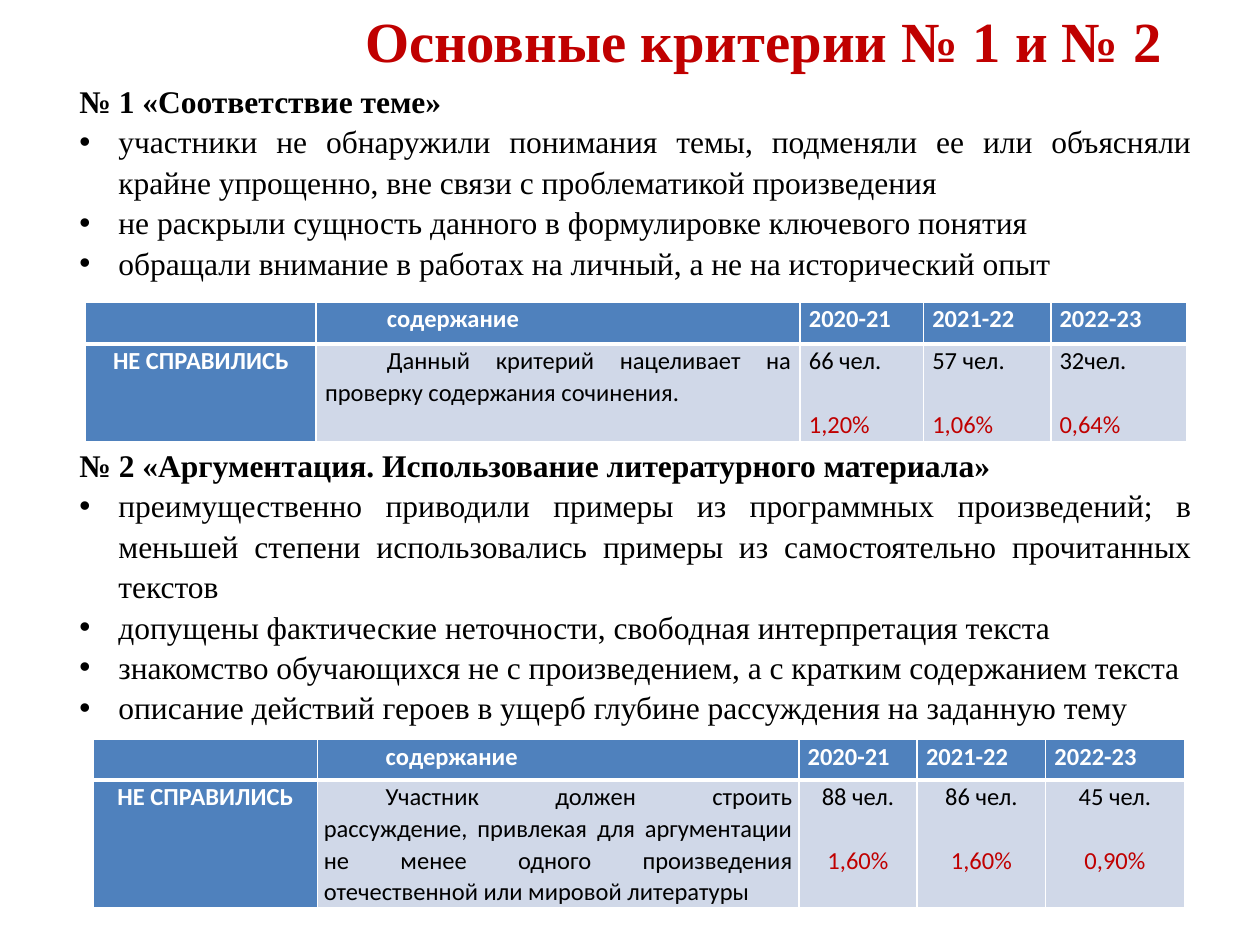
from lxml.etree import SubElement
from pptx import Presentation
from pptx.dml.color import RGBColor
from pptx.enum.text import MSO_ANCHOR, MSO_AUTO_SIZE, PP_ALIGN as Align
from pptx.oxml.ns import qn
from pptx.util import Inches, Pt

COLORS = {"accent": "C00000", "text": "000000", "white": "FFFFFF",
          "header": "4F81BD", "cell": "D0D8E8"}
SERIF, SANS = "Times New Roman", "Calibri"
LINE_SPACING = 1.07
YEARS = ["2020-21", "2021-22", "2022-23"]

CRITERIA = [
    ("№ 1 «Соответствие теме»", [
        "участники не обнаружили понимания темы, подменяли ее или объясняли "
        "крайне упрощенно, вне связи с проблематикой произведения",
        "не раскрыли сущность данного в формулировке ключевого понятия",
        "обращали внимание в работах на личный, а не на исторический опыт",
    ]),
    ("№ 2 «Аргументация. Использование литературного материала»", [
        "преимущественно приводили примеры из программных произведений; в "
        "меньшей степени использовались примеры из самостоятельно "
        "прочитанных текстов",
        "допущены фактические неточности, свободная интерпретация текста",
        "знакомство обучающихся не с произведением, а с кратким "
        "содержанием текста",
        "описание действий героев в ущерб глубине рассуждения на заданную тему",
    ]),
]


def place(shape, box):
    shape.left, shape.top, shape.width, shape.height = map(Inches, box)


def add_run(paragraph, text, font, size, color, bold=False):
    run = paragraph.add_run()
    run.text = text
    run.font.name, run.font.size, run.font.bold = font, Pt(size), bold
    run.font.color.rgb = RGBColor.from_string(COLORS[color])


def next_paragraph(frame):
    """Return the empty first paragraph, or a new one after the rest."""
    first = frame.paragraphs[0]
    return frame.add_paragraph() if first.runs else first


def set_indent(paragraph, left, first):
    properties = paragraph._p.get_or_add_pPr()
    properties.set("marL", str(Inches(left)))
    properties.set("indent", str(Inches(first)))
    return properties


def add_title(slide, box):
    title = slide.shapes.title
    place(title, box)
    frame = title.text_frame
    frame.auto_size = MSO_AUTO_SIZE.NONE
    frame.vertical_anchor = MSO_ANCHOR.MIDDLE
    paragraph = frame.paragraphs[0]
    paragraph.alignment = Align.CENTER
    add_run(paragraph, "Основные критерии № 1 и № 2", SERIF, 32.4, "accent", True)


def add_body_line(frame, text, bullet, space_before=0):
    paragraph = next_paragraph(frame)
    paragraph.alignment = Align.JUSTIFY
    paragraph.line_spacing = LINE_SPACING
    paragraph.space_before = Pt(space_before)
    paragraph.space_after = Pt(0)
    if bullet:
        properties = set_indent(paragraph, 0.43, -0.31)
        SubElement(properties, qn("a:buFont"), typeface="Arial")
        SubElement(properties, qn("a:buChar"), char="•")
    else:
        SubElement(set_indent(paragraph, 0.12, 0), qn("a:buNone"))
    add_run(paragraph, text, SERIF, 18, "text", not bullet)


def add_criteria(slide, box, table_gap):
    body = slide.placeholders[1]
    place(body, box)
    frame = body.text_frame
    frame.auto_size = MSO_AUTO_SIZE.NONE
    for index, (heading, points) in enumerate(CRITERIA):
        add_body_line(frame, heading, False, table_gap * index)
        for point in points:
            add_body_line(frame, point, True)


def fill_cell(cell, fill, lines, inset, align=Align.LEFT, indent=0, bold=False):
    """Each line is (text, color); later lines leave one line free above."""
    cell.fill.solid()
    cell.fill.fore_color.rgb = RGBColor.from_string(COLORS[fill])
    cell.margin_left = cell.margin_right = Inches(inset)
    cell.margin_top = cell.margin_bottom = 0
    for index, (text, color) in enumerate(lines):
        paragraph = next_paragraph(cell.text_frame)
        paragraph.alignment = align
        paragraph.line_spacing = LINE_SPACING
        paragraph.space_before = Pt(18.3 * index)
        set_indent(paragraph, 0, indent)
        add_run(paragraph, text, SANS, 14, color, bold)


def add_border(cell, side, width):
    """Draw a white line on one side; borders come before the cell's fill."""
    properties = cell._tc.get_or_add_tcPr()
    line = SubElement(properties, qn(f"a:{side}"), w=str(Pt(width)))
    fill = SubElement(line, qn("a:solidFill"))
    SubElement(fill, qn("a:srgbClr"), val=COLORS["white"])
    properties.insert(0, line)


def add_results_table(slide, box, columns, rows, content, results, inset, align):
    frame = slide.shapes.add_table(2, len(columns), *map(Inches, box))
    table = frame.table
    table.first_col = True
    for column, width in zip(table.columns, columns):
        column.width = Inches(width)
    for row, height in zip(table.rows, rows):
        row.height = Inches(height)

    # Row heading and content columns
    fill_cell(table.cell(0, 0), "header", [], inset)
    fill_cell(table.cell(1, 0), "header", [("НЕ СПРАВИЛИСЬ", "white")],
              inset, Align.CENTER, bold=True)
    fill_cell(table.cell(0, 1), "header", [("содержание", "white")],
              inset, Align.JUSTIFY, 0.49, True)
    fill_cell(table.cell(1, 1), "cell", [(content, "text")],
              inset, Align.JUSTIFY, 0.49)

    # Year columns
    for index, (year, (count, share)) in enumerate(zip(YEARS, results), start=2):
        fill_cell(table.cell(0, index), "header", [(year, "white")], 0.07, bold=True)
        fill_cell(table.cell(1, index), "cell",
                  [(count, "text"), (share, "accent")], inset, align)

    # Thick rule under the header row
    for index in range(len(columns)):
        add_border(table.cell(0, index), "lnB", 3)
        add_border(table.cell(1, index), "lnT", 3)


def main():
    presentation = Presentation()
    presentation.slide_width, presentation.slide_height = Inches(10), Inches(7.5)
    slide = presentation.slides.add_slide(presentation.slide_layouts[1])

    add_title(slide, (2.56, 0.01, 7, 0.61))
    add_criteria(slide, (0.41, 0.58, 9.15, 5.21), table_gap=92.4)
    add_results_table(
        slide, (0.68, 2.4, 8.74, 1.11), (1.83, 3.84, 0.98, 1.01, 1.08), (0.33, 0.78),
        "Данный критерий нацеливает на проверку содержания сочинения.",
        [("66 чел.", "1,20%"), ("57 чел.", "1,06%"), ("32чел.", "0,64%")],
        0.07, Align.LEFT)
    add_results_table(
        slide, (0.74, 5.87, 8.66, 1.32), (1.78, 3.82, 0.94, 1.02, 1.1), (0.32, 1),
        "Участник должен строить рассуждение, привлекая для аргументации не "
        "менее одного произведения отечественной или мировой литературы",
        [("88 чел.", "1,60%"), ("86 чел.", "1,60%"), ("45 чел.", "0,90%")],
        0.05, Align.CENTER)

    presentation.save("out.pptx")


if __name__ == "__main__":
    main()
